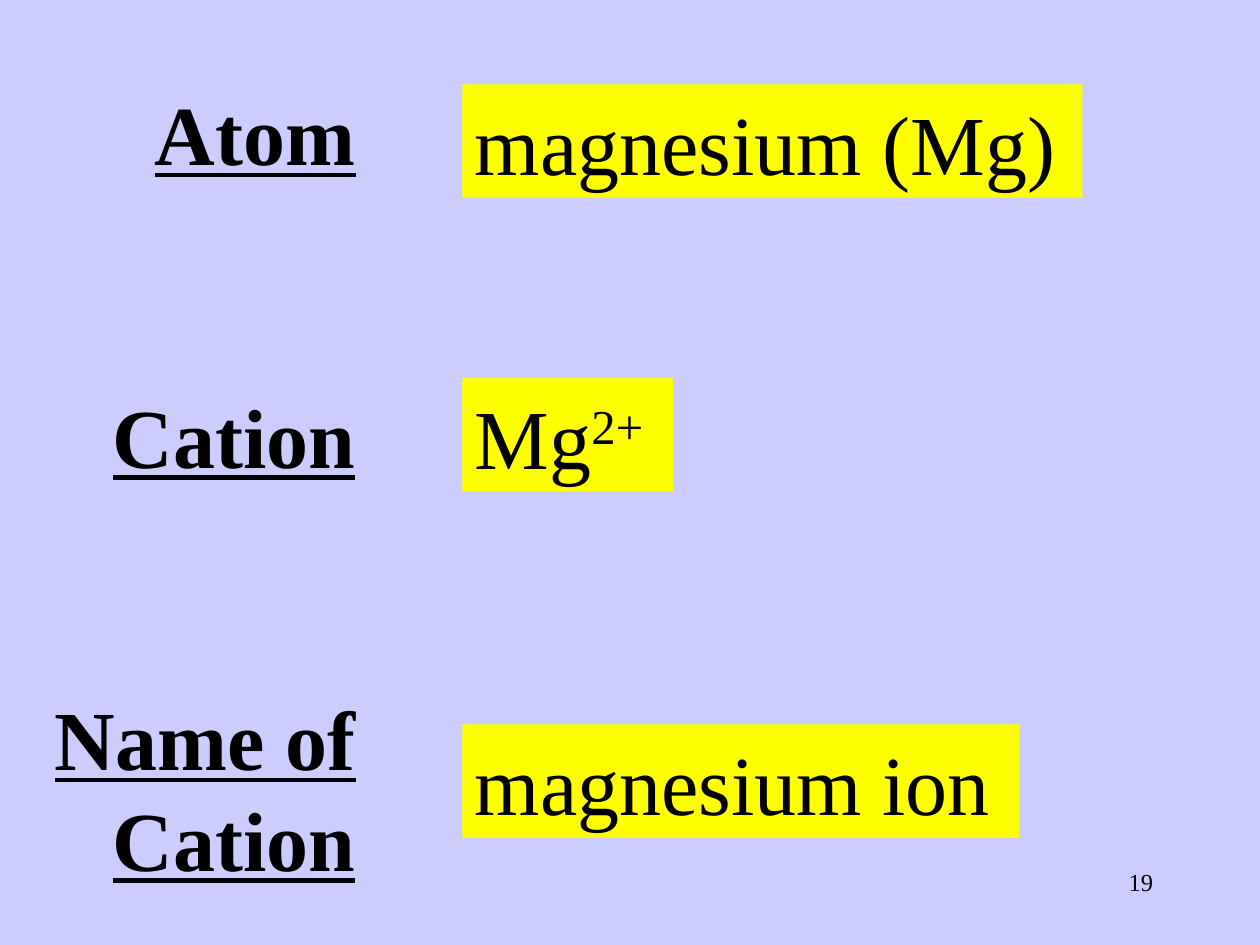
"""Build the slide that pairs an atom with its cation and the cation's name."""

from dataclasses import dataclass

from pptx import Presentation
from pptx.dml.color import RGBColor
from pptx.enum.shapes import MSO_SHAPE
from pptx.enum.text import MSO_ANCHOR, PP_ALIGN as Align
from pptx.util import Inches, Pt

COLORS = {"page": "CCCCFF", "answer": "FFFF00", "text": "000000"}
FONT = "Times New Roman"
TEXT_SIZE = 48
LINE_PITCH = Pt(57.6)
LABELS = ("Atom", "Cation", "Name of Cation")


@dataclass(frozen=True)
class Answer:
    top: float
    width: float
    text: str
    superscript: str = ""


ANSWERS = (
    Answer(0.67, 4.92, "magnesium (Mg)"),
    Answer(3, 1.67, "Mg", "2+"),
    Answer(5.75, 4.42, "magnesium ion"),
)


def color(name: str) -> RGBColor:
    return RGBColor.from_string(COLORS[name])


def add_span(para, text: str, size: float = TEXT_SIZE, heading: bool = False):
    span = para.add_run()
    span.text = text
    font = span.font
    font.name, font.size = FONT, Pt(size)
    font.bold = font.underline = heading
    font.color.rgb = color("text")
    return span


def add_labels(page) -> None:
    box = page.shapes.add_textbox(0, 0, Inches(2.92), Inches(7.5))
    frame = box.text_frame
    frame.word_wrap = True
    frame.vertical_anchor = MSO_ANCHOR.TOP
    frame.margin_top = Inches(0.65)
    for index, label in enumerate(LABELS):
        para = frame.add_paragraph() if index else frame.paragraphs[0]
        para.alignment = Align.RIGHT
        para.line_spacing = LINE_PITCH
        if index:
            para.space_before = 2 * LINE_PITCH
        add_span(para, label, heading=True)


def add_answer(page, answer: Answer) -> None:
    box = page.shapes.add_shape(
        MSO_SHAPE.RECTANGLE, Inches(3.67), Inches(answer.top),
        Inches(answer.width), Inches(0.9),
    )
    box.shadow.inherit = False
    box.fill.solid()
    box.fill.fore_color.rgb = color("answer")
    box.line.fill.background()
    frame = box.text_frame
    frame.word_wrap = False
    frame.vertical_anchor = MSO_ANCHOR.TOP
    frame.margin_top = Inches(0.06)
    para = frame.paragraphs[0]
    para.alignment = Align.LEFT
    para.line_spacing = LINE_PITCH
    add_span(para, answer.text)
    if answer.superscript:
        span = add_span(para, answer.superscript)
        span.font._element.set("baseline", "30000")


def add_page_number(page, number: str) -> None:
    box = page.shapes.add_textbox(
        Inches(7.17), Inches(6.83), Inches(2.08), Inches(0.5)
    )
    box.text_frame.word_wrap = True
    para = box.text_frame.paragraphs[0]
    para.alignment = Align.RIGHT
    add_span(para, number, size=14)


def main() -> None:
    deck = Presentation()
    deck.slide_width, deck.slide_height = Inches(10), Inches(7.5)
    page = deck.slides.add_slide(deck.slide_layouts[6])
    page.background.fill.solid()
    page.background.fill.fore_color.rgb = color("page")
    add_page_number(page, "19")
    add_labels(page)
    for answer in ANSWERS:
        add_answer(page, answer)
    deck.save("out.pptx")


if __name__ == "__main__":
    main()
